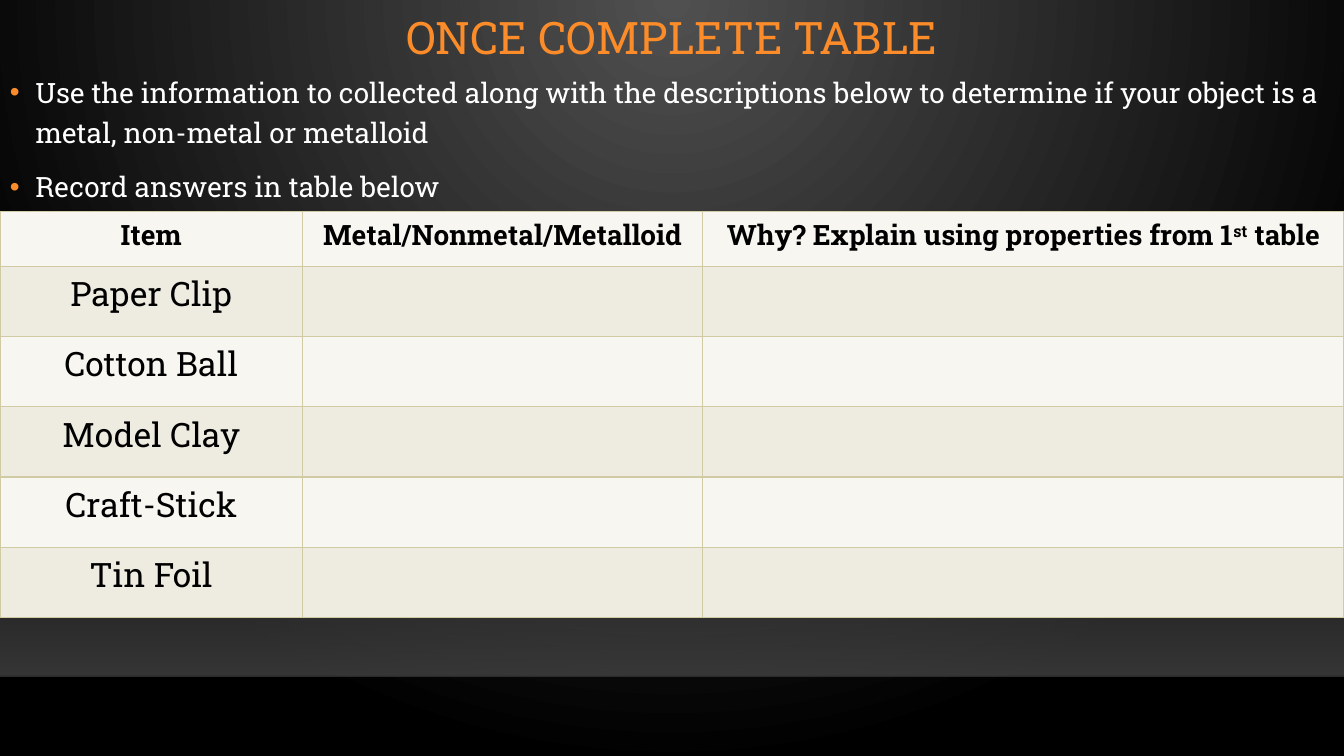
from lxml.etree import SubElement
from pptx import Presentation
from pptx.dml.color import RGBColor
from pptx.enum.shapes import MSO_CONNECTOR as Connector, MSO_SHAPE as Shape
from pptx.enum.text import MSO_ANCHOR as Anchor, PP_ALIGN as Align
from pptx.oxml.ns import qn
from pptx.util import Cm, Pt

FONT = "Roboto Slab"
ORANGE = RGBColor(0xFB, 0x8C, 0x29)
WHITE = RGBColor(0xFF, 0xFF, 0xFF)
BLACK = RGBColor(0x00, 0x00, 0x00)
GLOW = RGBColor(0x50, 0x50, 0x50)
FLOOR = RGBColor(0x45, 0x45, 0x45)
EDGE = RGBColor(0x00, 0x00, 0x01)
LIGHT_ROW = RGBColor(0xF7, 0xF6, 0xF0)
DARK_ROW = RGBColor(0xEE, 0xEC, 0xE1)
RULE = RGBColor(0xD0, 0xCB, 0xA5)

WIDTH, HEIGHT = Cm(33.87), Cm(19.05)
FLOOR_TOP, FLOOR_BOTTOM = Cm(10.06), Cm(17.04)

STEPS = [
    "Use the information to collected along with the descriptions below "
    "to determine if your object is a metal, non-metal or metalloid",
    "Record answers in table below",
]
HEADINGS = [["Item"], ["Metal/Nonmetal/Metalloid"],
            ["Why? Explain using properties from 1", "st", " table"]]
ITEMS = ["Paper Clip", "Cotton Ball", "Model Clay", "Craft-Stick", "Tin Foil"]
COLUMN_WIDTHS = [Cm(7.62), Cm(10.09), Cm(16.16)]
HEADING_HEIGHT, ITEM_HEIGHT = Cm(1.38), Cm(1.77)


def add_color(parent, color, opacity=100):
    clr = SubElement(parent, qn("a:srgbClr"), val=str(color))
    if opacity < 100:
        SubElement(clr, qn("a:alpha"), val=str(opacity * 1000))


def make_gradient(solid, stops):
    """Swap a solid fill for a gradient of (position, color, opacity) stops."""
    gradient = solid.makeelement(qn("a:gradFill"), {"rotWithShape": "1"})
    stop_list = SubElement(gradient, qn("a:gsLst"))
    for position, color, opacity in stops:
        stop = SubElement(stop_list, qn("a:gs"), pos=str(position * 1000))
        add_color(stop, color, opacity)
    solid.getparent().replace(solid, gradient)
    return gradient


def style_runs(paragraph, size, color, bold=False):
    for run in paragraph.runs:
        run.font.name = FONT
        run.font.size = Pt(size)
        run.font.bold = bold
        run.font.color.rgb = color


def add_backdrop(slide):
    # Spotlight from the top centre
    slide.background.fill.solid()
    solid = slide.element.find(".//" + qn("p:bgPr")).find(qn("a:solidFill"))
    glow = make_gradient(solid, [(0, GLOW, 100), (100, BLACK, 100)])
    spot = SubElement(glow, qn("a:path"), path="circle")
    SubElement(spot, qn("a:fillToRect"), l="43000", t="0", r="43000", b="100000")

    # Floor fading in downwards
    floor = slide.shapes.add_shape(Shape.RECTANGLE, 0, FLOOR_TOP, WIDTH,
                                   FLOOR_BOTTOM - FLOOR_TOP)
    floor.shadow.inherit = False
    floor.line.fill.background()
    floor.fill.solid()
    solid = floor.element.spPr.find(qn("a:solidFill"))
    fade = make_gradient(solid, [(0, FLOOR, 0), (100, FLOOR, 80)])
    SubElement(fade, qn("a:lin"), ang="5400000", scaled="0")

    # Floor edge
    edge = slide.shapes.add_connector(Connector.STRAIGHT, 0, FLOOR_BOTTOM,
                                      WIDTH, FLOOR_BOTTOM)
    edge.line.width = Pt(1)
    edge.line.color.rgb = EDGE
    edge_color = edge.element.spPr.find(".//" + qn("a:srgbClr"))
    SubElement(edge_color, qn("a:alpha"), val="20000")
    SubElement(edge.element.spPr, qn("a:effectLst"))


def add_text_frame(slide, left, top, width, height, anchor):
    frame = slide.shapes.add_textbox(left, top, width, height).text_frame
    frame.word_wrap = True
    frame.vertical_anchor = anchor
    return frame


def add_title(slide, text):
    frame = add_text_frame(slide, Cm(4.04), Cm(-0.46), Cm(25.8), Cm(2.92),
                           Anchor.MIDDLE)
    frame.text = text
    title = frame.paragraphs[0]
    title.alignment = Align.CENTER
    title.line_spacing = 0.9
    style_runs(title, 32, ORANGE)


def add_steps(slide, steps):
    frame = add_text_frame(slide, 0, Cm(1.6), WIDTH, Cm(13.59), Anchor.TOP)
    frame.text = "\n".join(steps)
    for index, step in enumerate(frame.paragraphs):
        props = step._p.get_or_add_pPr()
        props.set("marL", str(Cm(0.64)))
        props.set("indent", str(Cm(-0.64)))
        add_color(SubElement(props, qn("a:buClr")), ORANGE)
        SubElement(props, qn("a:buFont"), typeface="Arial")
        SubElement(props, qn("a:buChar"), char="•")
        step.line_spacing = 1.2
        if index:
            step.space_before = Pt(10)
        style_runs(step, 20, WHITE)


def add_borders(cell):
    props = cell._tc.get_or_add_tcPr()
    for position, side in enumerate(["lnL", "lnR", "lnT", "lnB"]):
        border = props.makeelement(qn("a:" + side), {"w": str(Pt(1))})
        add_color(SubElement(border, qn("a:solidFill")), RULE)
        props.insert(position, border)


def fill_cell(cell, pieces, size, bold):
    paragraph = cell.text_frame.paragraphs[0]
    paragraph.alignment = Align.CENTER
    for piece in pieces:
        paragraph.add_run().text = piece
    style_runs(paragraph, size, BLACK, bold)
    for run in paragraph.runs[1:2]:  # the ordinal ending
        run._r.get_or_add_rPr().set("baseline", "30000")


def add_answer_table(slide):
    rows = [HEADINGS] + [[[item], [], []] for item in ITEMS]
    table = slide.shapes.add_table(
        len(rows), len(HEADINGS), 0, Cm(5.33), WIDTH,
        HEADING_HEIGHT + ITEM_HEIGHT * len(ITEMS)).table
    table.horz_banding = False
    for column, width in zip(table.columns, COLUMN_WIDTHS):
        column.width = width
    for r, row in enumerate(rows):
        is_heading = r == 0
        table.rows[r].height = HEADING_HEIGHT if is_heading else ITEM_HEIGHT
        for c, pieces in enumerate(row):
            cell = table.cell(r, c)
            cell.fill.solid()
            cell.fill.fore_color.rgb = DARK_ROW if r % 2 else LIGHT_ROW
            add_borders(cell)
            fill_cell(cell, pieces, 20 if is_heading else 24, is_heading)


def main():
    deck = Presentation()
    deck.slide_width, deck.slide_height = WIDTH, HEIGHT
    slide = deck.slides.add_slide(deck.slide_layouts[6])
    add_backdrop(slide)
    add_title(slide, "ONCE COMPLETE TABLE")
    add_steps(slide, STEPS)
    add_answer_table(slide)
    deck.save("out.pptx")


if __name__ == "__main__":
    main()
